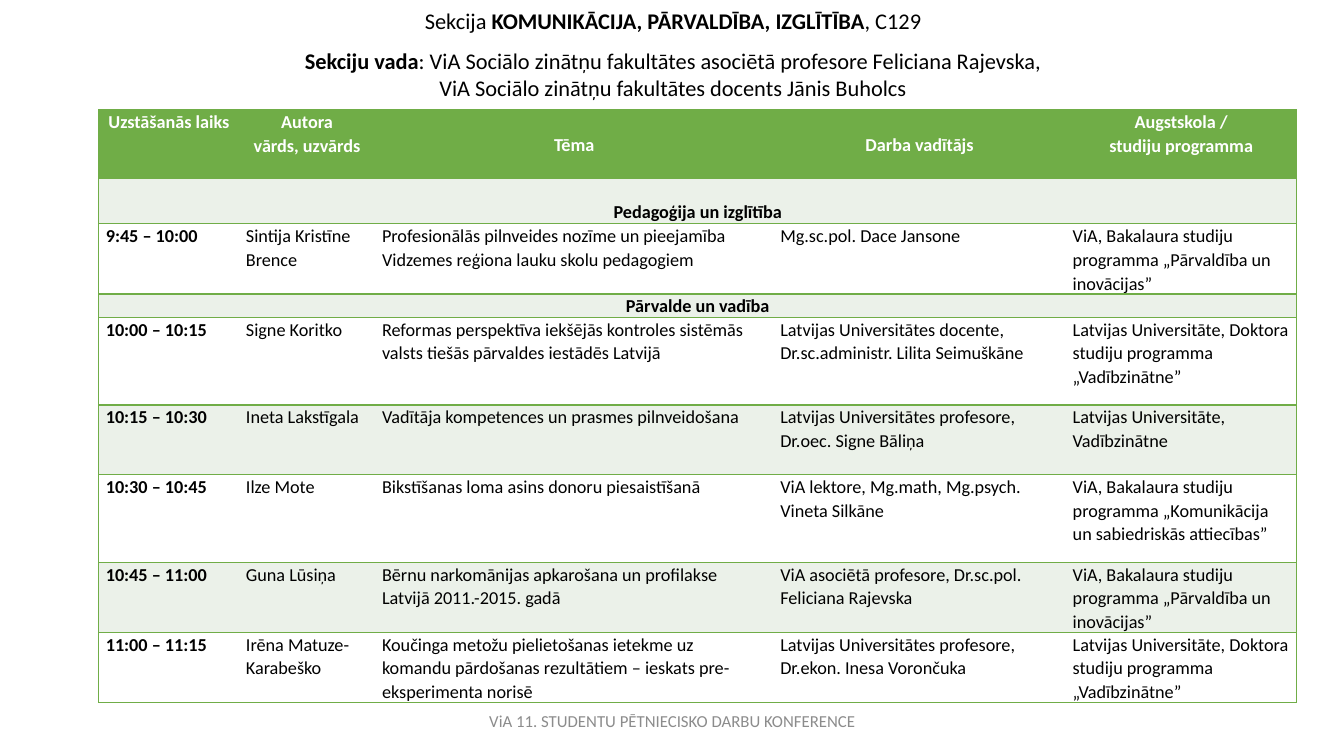
"""Build the conference section programme slide with its timetable."""
from lxml import etree
from pptx import Presentation, util as u
from pptx.dml.color import RGBColor
from pptx.enum import text
from pptx.oxml import ns

GREEN, PALE, WHITE, BLACK, GREY = "70AD47", "EBF1E9", "FFFFFF", "000000", "8C8C8C"
CENTER, LEFT = text.PP_ALIGN.CENTER, text.PP_ALIGN.LEFT
TOP, MIDDLE, BOTTOM = text.MSO_ANCHOR.TOP, text.MSO_ANCHOR.MIDDLE, text.MSO_ANCHOR.BOTTOM


def write(frame, lines, size, color, align=CENTER, spacings=None):
    """Fill a frame with paragraphs, each a list of (words, bold) runs."""
    frame.word_wrap = True
    for i, line in enumerate(lines):
        paragraph = frame.paragraphs[0] if i == 0 else frame.add_paragraph()
        paragraph.alignment = align
        paragraph.line_spacing = spacings[i] if spacings else 1.07
        for words, bold in line:
            run = paragraph.add_run()
            run.text = words
            run.font.name, run.font.size, run.font.bold = "Calibri", u.Pt(size), bold
            run.font.color.rgb = RGBColor.from_string(color)


def border(cell, sides):
    """Draw one-point green lines on the given sides of a cell."""
    props = cell._tc.get_or_add_tcPr()
    for i, side in enumerate(sides):
        edge = etree.Element(ns.qn(f"a:ln{side}"), w=str(u.Pt(1)))
        fill = etree.SubElement(edge, ns.qn("a:solidFill"))
        etree.SubElement(fill, ns.qn("a:srgbClr"), val=GREEN)
        props.insert(i, edge)


deck = Presentation()
deck.slide_width, deck.slide_height = u.Inches(13.33), u.Inches(7.5)
slide = deck.slides.add_slide(deck.slide_layouts[6])

heading = slide.shapes.add_textbox(u.Inches(0.33), 0, u.Inches(12.69), u.Inches(1.06))
write(heading.text_frame, [
    [("Sekcija ", False), ("KOMUNIKĀCIJA, PĀRVALDĪBA, IZGLĪTĪBA", True), (", C129", False)],
    [("Sekciju vada", True),
     (": ViA Sociālo zinātņu fakultātes asociētā profesore Feliciana Rajevska,", False)],
    [("ViA Sociālo zinātņu fakultātes docents Jānis Buholcs", False)],
], 16, BLACK, spacings=[1.07, 1.5, 1.0])

column_titles = [["Uzstāšanās laiks"], ["Autora", "vārds, uzvārds"], ["Tēma"],
                 ["Darba vadītājs"], ["Augstskola /", "studiju programma"]]
management = "ViA, Bakalaura studiju programma „Pārvaldība un inovācijas”"
doctoral = "Latvijas Universitāte, Doktora studiju programma „Vadībzinātne”"
programme = [
    (0.45, PALE, ["Pedagoģija un izglītība"]),
    (0.69, WHITE, ["9:45 – 10:00", "Sintija Kristīne Brence",
                   "Profesionālās pilnveides nozīme un pieejamība Vidzemes reģiona lauku skolu pedagogiem",
                   "Mg.sc.pol. Dace Jansone", management]),
    (0.23, PALE, ["Pārvalde un vadība"]),
    (0.87, WHITE, ["10:00 – 10:15", "Signe Koritko",
                   "Reformas perspektīva iekšējās kontroles sistēmās valsts tiešās pārvaldes iestādēs Latvijā",
                   "Latvijas Universitātes docente, Dr.sc.administr. Lilita Seimuškāne", doctoral]),
    (0.69, PALE, ["10:15 – 10:30", "Ineta Lakstīgala",
                  "Vadītāja kompetences un prasmes pilnveidošana",
                  "Latvijas Universitātes profesore, Dr.oec. Signe Bāliņa",
                  "Latvijas Universitāte, Vadībzinātne"]),
    (0.87, WHITE, ["10:30 – 10:45", "Ilze Mote", "Bikstīšanas loma asins donoru piesaistīšanā",
                   "ViA lektore, Mg.math, Mg.psych. Vineta Silkāne",
                   "ViA, Bakalaura studiju programma „Komunikācija un sabiedriskās attiecības”"]),
    (0.69, PALE, ["10:45 – 11:00", "Guna Lūsiņa",
                  "Bērnu narkomānijas apkarošana un profilakse Latvijā 2011.-2015. gadā",
                  "ViA asociētā profesore, Dr.sc.pol. Feliciana Rajevska", management]),
    (0.69, WHITE, ["11:00 – 11:15", "Irēna Matuze-Karabeško",
                   "Koučinga metožu pielietošanas ietekme uz komandu pārdošanas rezultātiem"
                   " – ieskats pre-eksperimenta norisē",
                   "Latvijas Universitātes profesore, Dr.ekon. Inesa Vorončuka", doctoral]),
]
widths = [1.39, 1.35, 3.95, 2.9, 2.29]
heights = [0.68] + [height for height, _, _ in programme]
last = len(widths) - 1

timetable = slide.shapes.add_table(
    len(heights), len(widths), u.Inches(0.98), u.Inches(1.09),
    u.Inches(sum(widths)), u.Inches(sum(heights))).table
plain_style = "{2D5ABB26-0587-4C30-8999-92F81FD0307C}"
timetable._tbl.tblPr.find(ns.qn("a:tableStyleId")).text = plain_style
for column, width in zip(timetable.columns, widths):
    column.width = u.Inches(width)
for row, height in zip(timetable.rows, heights):
    row.height = u.Inches(height)

for r in range(len(heights)):
    fill, entries = (GREEN, column_titles) if r == 0 else programme[r - 1][1:]
    section = len(entries) == 1
    if section:
        timetable.cell(r, 0).merge(timetable.cell(r, last))
    for c in range(len(widths)):
        cell = timetable.cell(r, c)
        cell.margin_left = cell.margin_right = u.Inches(0.07)
        cell.margin_top = cell.margin_bottom = 0
        cell.fill.solid()
        cell.fill.fore_color.rgb = RGBColor.from_string(fill)
        left, right = c == 0, c == last or section
        border(cell, "L" * left + "R" * right + "TB")
        if c >= len(entries):
            continue
        if r == 0:
            cell.vertical_anchor = MIDDLE if c in (2, 3) else TOP
            write(cell.text_frame, [[(line, True)] for line in entries[c]], 13, WHITE)
        else:
            cell.vertical_anchor = BOTTOM if section else TOP
            write(cell.text_frame, [[(entries[c], c == 0)]], 13, BLACK,
                  CENTER if section else LEFT)

footer = slide.shapes.add_textbox(u.Inches(4.42), u.Inches(6.95), u.Inches(4.5), u.Inches(0.4))
footer.text_frame.vertical_anchor = MIDDLE
write(footer.text_frame, [[("ViA 11. STUDENTU PĒTNIECISKO DARBU KONFERENCE", False)]],
      12, GREY, spacings=[1.0])

deck.save("out.pptx")
